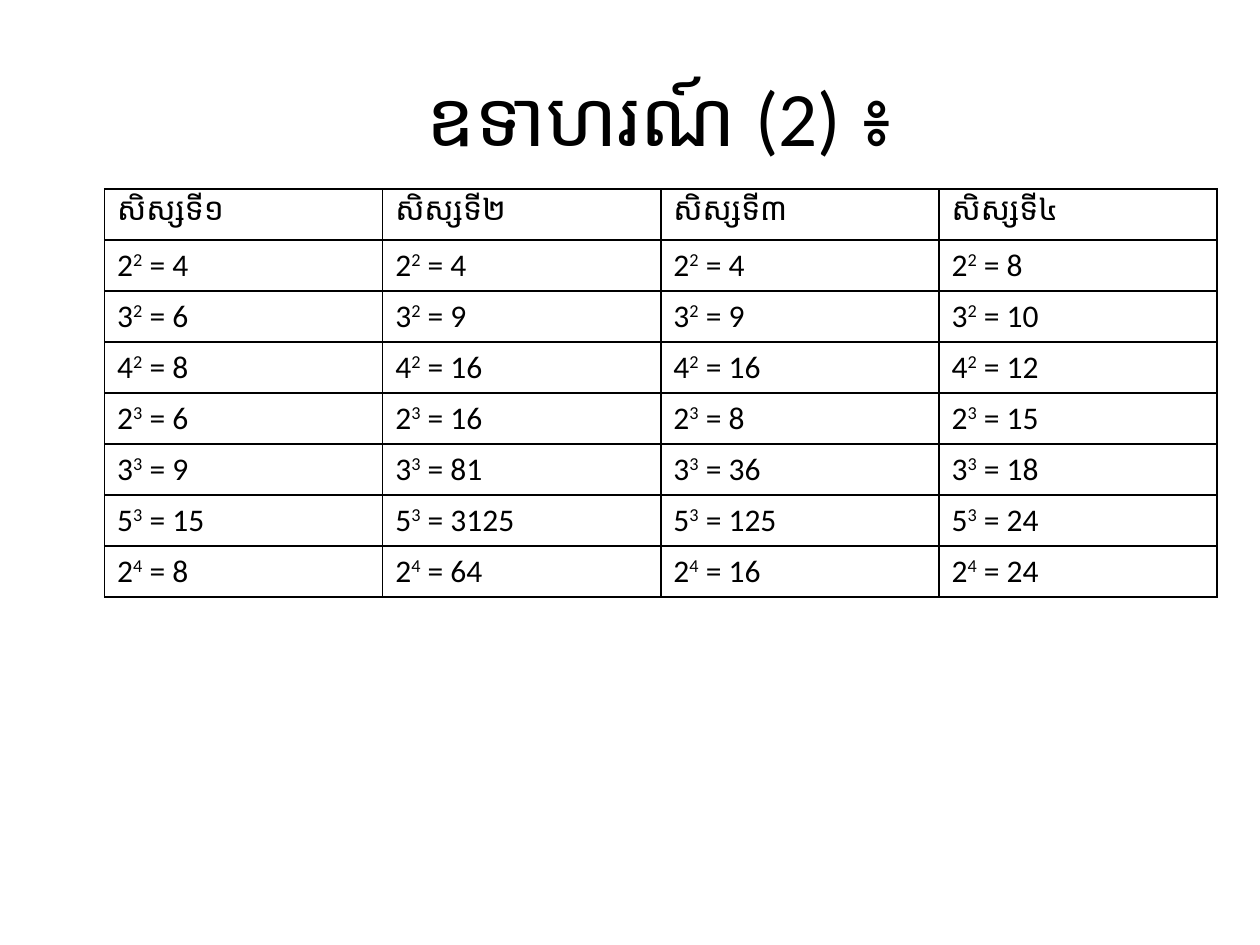
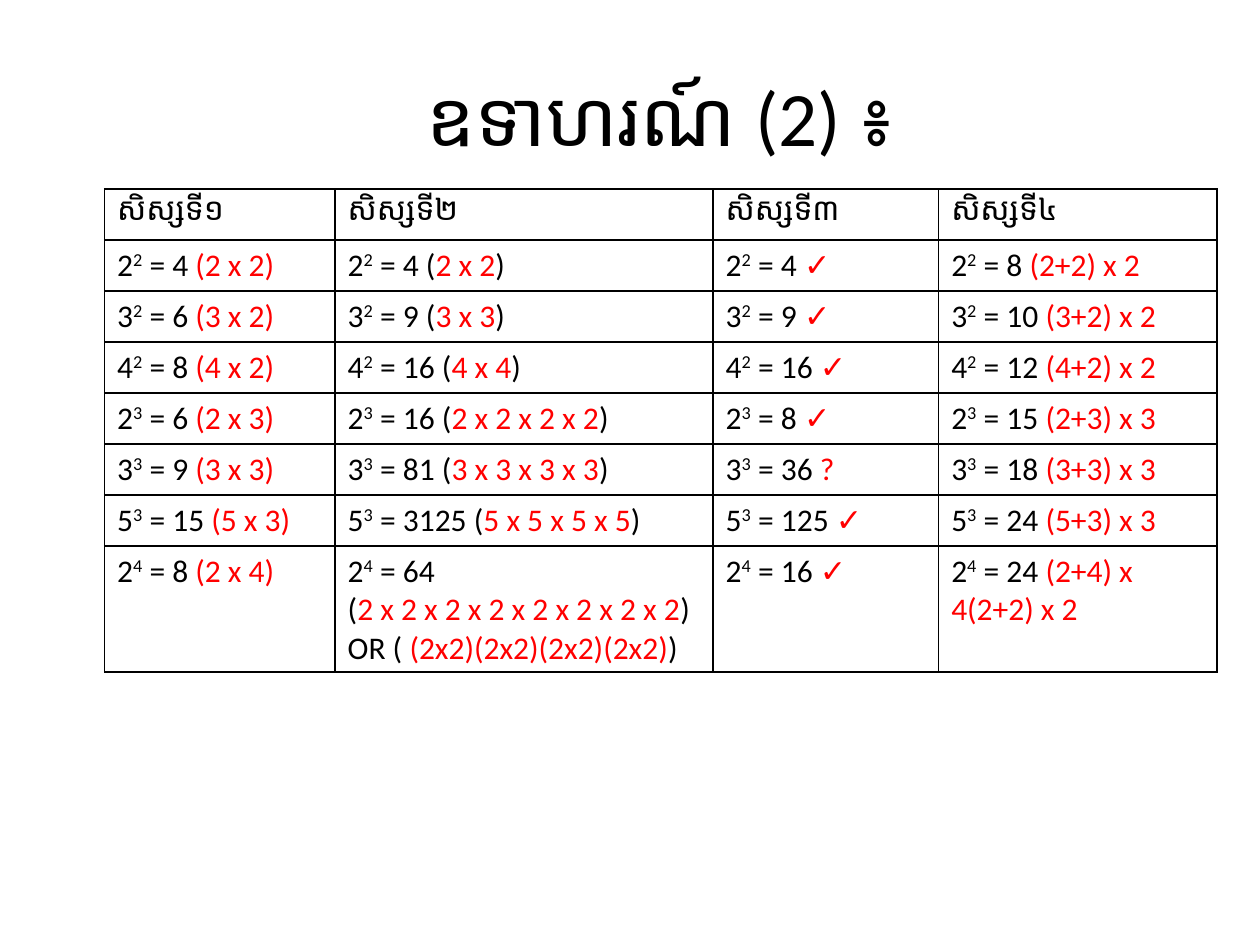
from lxml.etree import SubElement
from pptx import Presentation
from pptx.dml.color import RGBColor
from pptx.enum.text import MSO_ANCHOR, PP_ALIGN
from pptx.oxml.ns import qn
from pptx.util import Inches, Pt

FONT = "Calibri"
HUES = {"ink": "000000", "note": "FF0000"}
LEFT, WIDTH = 0.83, 8.83
TITLE = "ឧទាហរណ៍ (2) ៖"
HEADS = ["សិស្សទី១", "សិស្សទី២", "សិស្សទី៣", "សិស្សទី៤"]
POWERS = ["22", "32", "42", "23", "33", "53", "24"]
RESULTS = [
    [4, 4, 4, 8],
    [6, 9, 9, 10],
    [8, 16, 16, 12],
    [6, 16, 8, 15],
    [9, 81, 36, 18],
    [15, 3125, 125, 24],
    [8, 64, 16, 24],
]
NOTES = [
    [" |(2 x 2)", " (|2 x 2|)", " |✓", " |(2+2) x 2"],
    [" |(3 x 2)", " (|3 x 3|)", " |✓", " |(3+2) x 2"],
    [" |(4 x 2)", " (|4 x 4|)", " |✓", " |(4+2) x 2"],
    [" |(2 x 3)", " (|2 x 2 x 2 x 2|)", " |✓", " |(2+3) x 3"],
    [" |(3 x 3)", " (|3 x 3 x 3 x 3|)", " |?", " |(3+3) x 3"],
    [" |(5 x 3)", " (|5 x 5 x 5 x 5|)", " |✓", " |(5+3) x 3"],
    [" |(2 x 4)",
     "\n(|2 x 2 x 2 x 2 x 2 x 2 x 2 x 2|) OR ( |(2x2)(2x2)(2x2)(2x2)|)",
     " |✓", " |(2+4) x 4(2+2) x 2"],
]
BLANKS = [[""] * 4 for _ in POWERS]


def style(run, size, hue="ink"):
    """Set the font, size and colour of a run."""
    run.font.name = FONT
    run.font.size = Pt(size)
    run.font.color.rgb = RGBColor.from_string(HUES[hue])


def add_run(para, text, hue="ink", raised=False):
    """Append a run of table text, raised for an exponent."""
    run = para.add_run()
    run.text = text
    style(run, 18, hue)
    if raised:
        run.font._element.set("baseline", "30000")


def add_parts(para, text):
    """Write text whose parts, split by bars, turn from ink to note colour."""
    for i, part in enumerate(text.split("|")):
        if part:
            add_run(para, part, "note" if i % 2 else "ink")


def add_title(slide):
    """Add the centred slide title."""
    box = slide.shapes.add_textbox(
        Inches(LEFT), Inches(0.29), Inches(WIDTH), Inches(1.25))
    frame = box.text_frame
    frame.word_wrap = True
    frame.vertical_anchor = MSO_ANCHOR.MIDDLE
    frame.text = TITLE
    para = frame.paragraphs[0]
    para.alignment = PP_ALIGN.CENTER
    style(para.runs[0], 44)


def frame_cell(cell):
    """Give a cell thin borders and no fill."""
    props = cell._tc.get_or_add_tcPr()
    for side in ("lnL", "lnR", "lnT", "lnB"):
        line = SubElement(props, qn(f"a:{side}"), w=str(Pt(1)))
        fill = SubElement(line, qn("a:solidFill"))
        SubElement(fill, qn("a:srgbClr"), val=HUES["ink"])
    cell.fill.background()


def fill_sum(cell, power, result, note):
    """Write a power, its result and the note on it."""
    frame = cell.text_frame
    para = frame.paragraphs[0]
    base, index = power
    add_run(para, base)
    add_run(para, index, raised=True)
    first, *rest = f" = {result}{note}".split("\n")
    add_parts(para, first)
    for text in rest:
        add_parts(frame.add_paragraph(), text)


def add_grid(slide, widths, notes):
    """Add the table of the four students' results."""
    grid = slide.shapes.add_table(
        len(POWERS) + 1, len(HEADS), Inches(LEFT), Inches(1.5),
        Inches(WIDTH), Inches(3.24)).table
    grid.first_row = grid.horz_banding = False
    for col, width in zip(grid.columns, widths):
        col.width = Inches(width)
    for cell in grid.iter_cells():
        frame_cell(cell)
    for c, head in enumerate(HEADS):
        add_run(grid.cell(0, c).text_frame.paragraphs[0], head)
    for r, (power, results, row) in enumerate(zip(POWERS, RESULTS, notes), 1):
        for c, (result, note) in enumerate(zip(results, row)):
            fill_sum(grid.cell(r, c), power, result, note)


def main():
    """Build the plain table and the table with notes."""
    deck = Presentation()
    deck.slide_width, deck.slide_height = Inches(10), Inches(7.5)
    pages = [([WIDTH / 4] * 4, BLANKS), ([1.83, 3, 1.79, 2.21], NOTES)]
    for widths, notes in pages:
        slide = deck.slides.add_slide(deck.slide_layouts[6])
        add_title(slide)
        add_grid(slide, widths, notes)
    deck.save("out.pptx")


if __name__ == "__main__":
    main()
